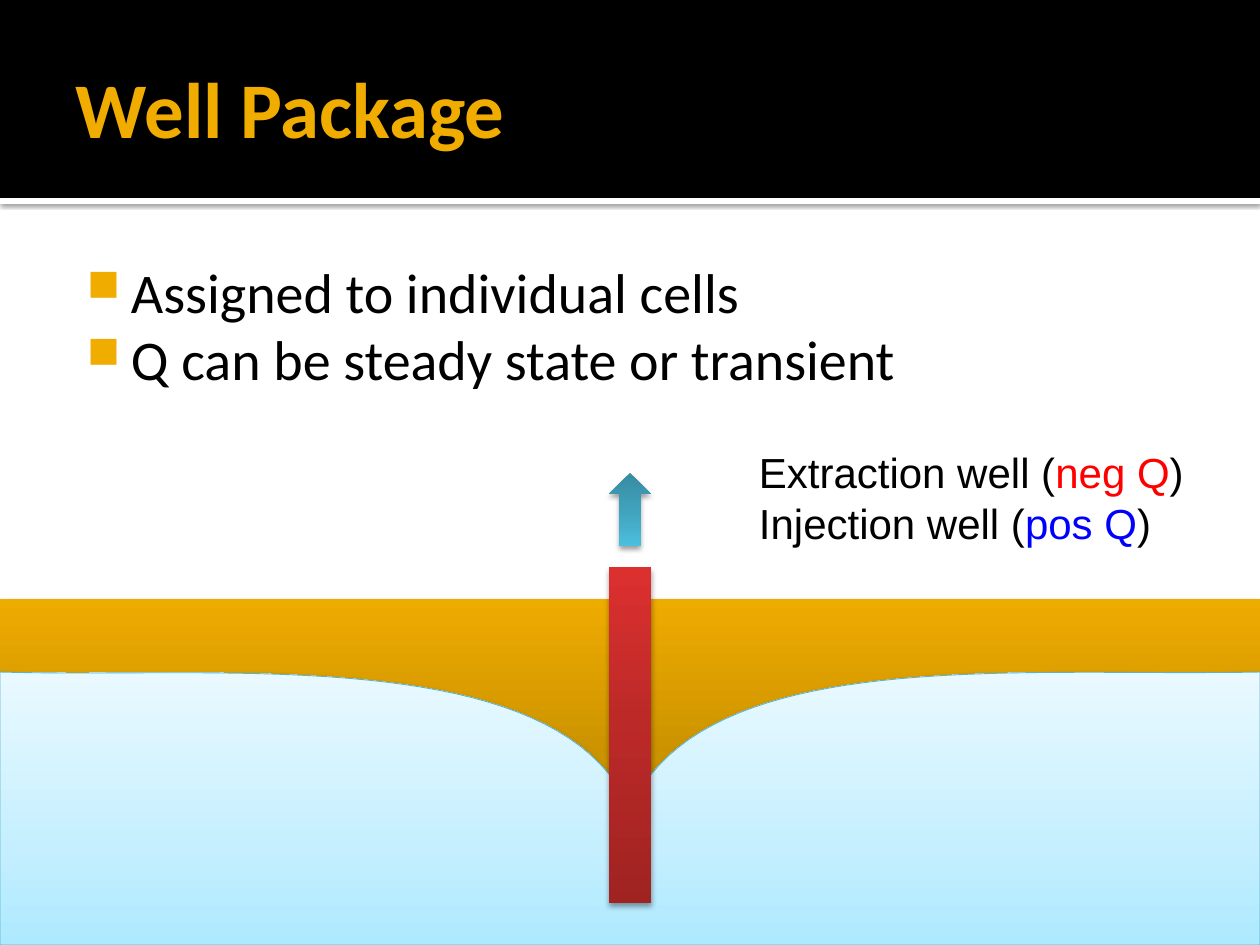
from copy import deepcopy

from lxml.etree import SubElement
from pptx import Presentation
from pptx.dml.color import RGBColor
from pptx.enum.shapes import MSO_SHAPE
from pptx.enum.text import MSO_ANCHOR
from pptx.oxml.ns import qn
from pptx.util import Emu, Pt

SCALE = 914400 / 126
WIDTH, HEIGHT = 1260, 945
THEME = {
    "black": "000000", "white": "FFFFFF", "gold": "F0AD00",
    "negative": "FF0000", "positive": "0000FF", "waterline": "5BB3CA",
    "soil": [(0, "AE7D00"), (0.55, "CC9300"), (1, "EEAB00")],
    "water": [(0, "ADE9FF"), (0.35, "C5EFFF"), (1, "E9F9FF")],
    "well": [(0, "A02322"), (0.55, "BC2A28"), (1, "DC302F")],
    "flow": [(0, "378BA2"), (0.55, "41A4BF"), (1, "4BBFDE")],
    "heading": {"name": "Calibri", "size": Pt(45), "bold": True},
    "body": {"name": "Calibri", "size": Pt(32)},
    "label": {"name": "Arial", "size": Pt(24)},
}


def style_shape(shape, fill, angle=90, line=None, shadow=None):
    if isinstance(fill, str):
        shape.fill.solid()
        shape.fill.fore_color.rgb = RGBColor.from_string(fill)
    else:
        shape.fill.gradient()
        shape.fill.gradient_angle = angle
        stop_list = shape._element.spPr.find(".//" + qn("a:gsLst"))
        stop_list.append(deepcopy(stop_list[-1]))
        for stop, (position, color) in zip(shape.fill.gradient_stops, fill):
            stop.position = position
            stop.color.rgb = RGBColor.from_string(color)
    if line:
        shape.line.color.rgb = RGBColor.from_string(line)
        shape.line.width = Pt(0.5)
    else:
        shape.line.fill.background()
    shape.shadow.inherit = False
    if shadow:
        opacity, blur, distance = shadow
        effects = shape._element.spPr.find(qn("a:effectLst"))
        outer = SubElement(effects, qn("a:outerShdw"), blurRad=str(Pt(blur)),
                           dist=str(Pt(distance)), dir="5400000", rotWithShape="0")
        color = SubElement(outer, qn("a:srgbClr"), val=THEME["black"])
        SubElement(color, qn("a:alpha"), val=str(opacity * 1000))


def add_text(box, insets, lines, font, anchor=MSO_ANCHOR.TOP):
    frame = slide.shapes.add_textbox(*[Emu(round(v * SCALE)) for v in box]).text_frame
    layout = {"word_wrap": True, "vertical_anchor": anchor}
    sides = ("margin_left", "margin_top", "margin_right", "margin_bottom")
    layout.update(zip(sides, [Emu(round(v * SCALE)) for v in insets]))
    for name, value in layout.items():
        setattr(frame, name, value)
    for index, line in enumerate(lines):
        paragraph = frame.add_paragraph() if index else frame.paragraphs[0]
        for text, color in line:
            run = paragraph.add_run()
            run.text = text
            for name, value in THEME[font].items():
                setattr(run.font, name, value)
            run.font.color.rgb = RGBColor.from_string(THEME[color])
    return frame


presentation = Presentation()
presentation.slide_width = Emu(round(WIDTH * SCALE))
presentation.slide_height = Emu(round(HEIGHT * SCALE))
slide = presentation.slides.add_slide(presentation.slide_layouts[6])

soft_shadow = (38, 3.1, 2)
blocks = {
    "rule": (MSO_SHAPE.RECTANGLE, (0, 198, WIDTH, 6), "white", 90, (60, 2.5, 0.8)),
    "banner": (MSO_SHAPE.RECTANGLE, (0, 0, WIDTH, 198), "black", 90, None),
    "soil": (MSO_SHAPE.RECTANGLE, (0, 599, WIDTH, 346), "soil", 90, soft_shadow),
    "water": None,
    "well": (MSO_SHAPE.RECTANGLE, (609, 567, 42, 336), "well", 90, soft_shadow),
    "flow": (MSO_SHAPE.UP_ARROW, (609, 473, 42, 73), "flow", 270, soft_shadow),
}
water_curves = [
    [(0, 672), (214, 679), (558, 641), (630, 809)],
    [(630, 809), (704, 644), (1018, 677), (WIDTH, 672)],
]
steps = 40
for name, block in blocks.items():
    if name == "water":
        surface = []
        for curve in water_curves:
            for step in range(1, steps + 1):
                t = step / steps
                weights = ((1 - t) ** 3, 3 * t * (1 - t) ** 2, 3 * t * t * (1 - t), t ** 3)
                surface.append([sum(w * point[axis] for w, point in zip(weights, curve))
                                for axis in (0, 1)])
        outline = [(0, 672), *surface, (WIDTH, HEIGHT), (0, HEIGHT)]
        points = [(round(x * SCALE), round(y * SCALE)) for x, y in outline]
        builder = slide.shapes.build_freeform(*points[0])
        builder.add_line_segments(points[1:], close=True)
        style_shape(builder.convert_to_shape(), THEME["water"],
                    line=THEME["waterline"], shadow=(38, 3.5, 2))
    else:
        kind, box, fill, angle, shadow = block
        shape = slide.shapes.add_shape(kind, *[Emu(round(v * SCALE)) for v in box])
        style_shape(shape, THEME[fill], angle, shadow=shadow)

add_text((63, 21, 1134, 173), (13, 6, 6, 6), [[("Well Package", "gold")]],
         "heading", MSO_ANCHOR.MIDDLE)

bullets = add_text((63, 244, 1134, 638), (8, 13, 13, 6), [
    [("Assigned to individual cells", "black")],
    [("Q can be steady state or transient", "black")],
], "body")
for paragraph in bullets.paragraphs:
    properties = paragraph._p.get_or_add_pPr()
    properties.set("marL", str(round(60 * SCALE)))
    properties.set("indent", str(round(-44 * SCALE)))
    bullet_color = SubElement(properties, qn("a:buClr"))
    SubElement(bullet_color, qn("a:srgbClr"), val=THEME["gold"])
    SubElement(properties, qn("a:buSzPct"), val="80000")
    SubElement(properties, qn("a:buChar"), char="■")

add_text((746, 441, 451, 115), (13, 6, 13, 6), [
    [("Extraction well (", "black"), ("neg Q", "negative"), (")", "black")],
    [("Injection well (", "black"), ("pos Q", "positive"), (")", "black")],
], "label")

presentation.save("out.pptx")
